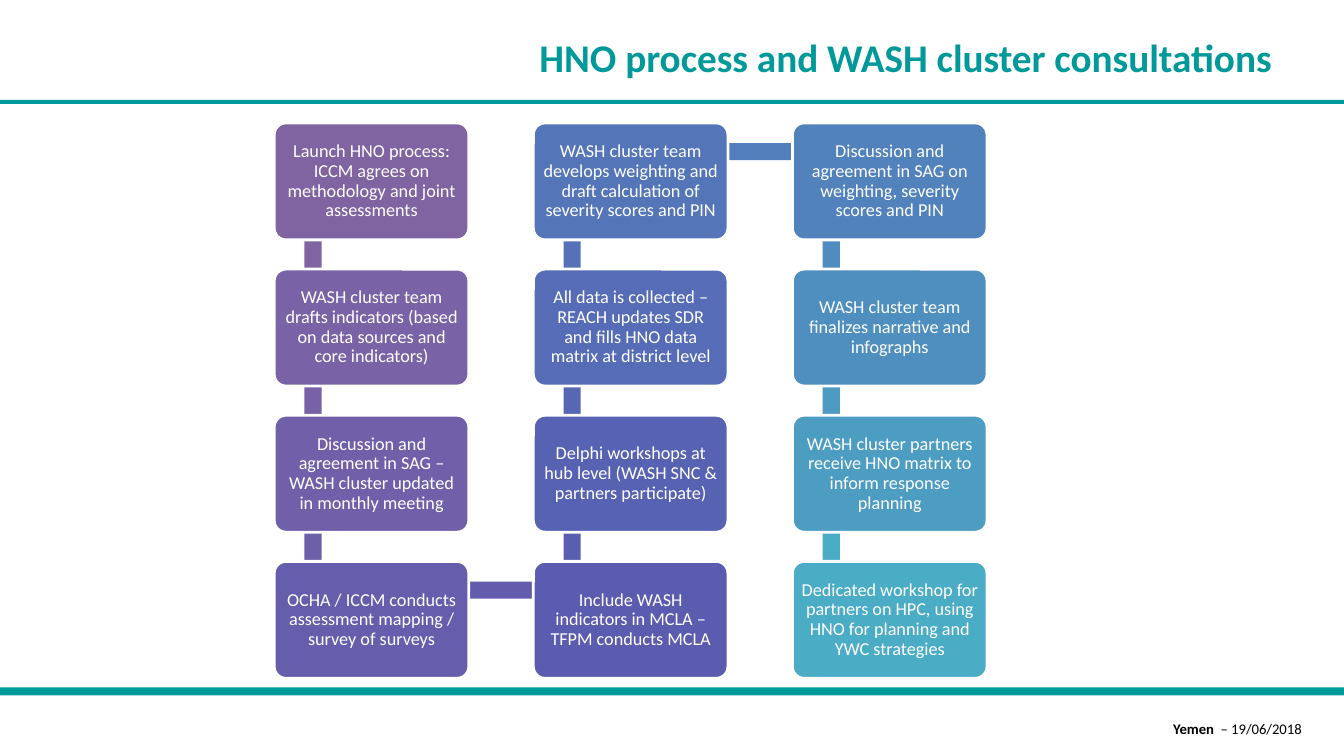
import dataclasses
import typing

import pptx
import pptx.dml.color
import pptx.enum.shapes
import pptx.enum.text
import pptx.util

RGB = pptx.dml.color.RGBColor
KIND = pptx.enum.shapes.MSO_SHAPE
ALIGN = pptx.enum.text.PP_ALIGN
MIDDLE = pptx.enum.text.MSO_ANCHOR.MIDDLE
Inches = pptx.util.Inches
Pt = pptx.util.Pt

FONT = "Calibri"
TEAL = RGB(0x00, 0x99, 0x99)
WHITE = RGB(0xFF, 0xFF, 0xFF)
BLACK = RGB(0x00, 0x00, 0x00)

# Grid of steps, in inches
WIDE, HIGH = 13.33, 7.5
ROWS = 4
LEFT, TOP = 2.72, 1.22
COL, ROW = 2.57, 1.45
BOX_W, BOX_H = 1.93, 1.16
BAR = 0.17


@dataclasses.dataclass(frozen=True)
class Step:
    text: str
    fill: RGB
    link: typing.Optional[RGB] = None  # bar to the next step


STEPS = [
    Step("Launch HNO process: ICCM agrees on methodology and joint assessments",
         RGB(0x80, 0x64, 0xA2), RGB(0x80, 0x64, 0xA2)),
    Step("WASH cluster team drafts indicators (based on data sources and core indicators)",
         RGB(0x79, 0x62, 0xA5), RGB(0x78, 0x61, 0xA6)),
    Step("Discussion and agreement in SAG – WASH cluster updated in monthly meeting",
         RGB(0x70, 0x5F, 0xA9), RGB(0x6E, 0x5F, 0xA9)),
    Step("OCHA / ICCM conducts assessment mapping / survey of surveys",
         RGB(0x66, 0x5D, 0xAC), RGB(0x63, 0x5C, 0xAD)),
    Step("Include WASH indicators in MCLA – TFPM conducts MCLA",
         RGB(0x5B, 0x5B, 0xAF), RGB(0x5A, 0x5E, 0xB1)),
    Step("Delphi workshops at hub level (WASH SNC & partners participate)",
         RGB(0x58, 0x62, 0xB3), RGB(0x57, 0x67, 0xB4)),
    Step("All data is collected – REACH updates SDR and fills HNO data matrix at district level",
         RGB(0x56, 0x6C, 0xB6), RGB(0x55, 0x72, 0xB8)),
    Step("WASH cluster team develops weighting and draft calculation of severity scores and PIN",
         RGB(0x54, 0x76, 0xB9), RGB(0x52, 0x7E, 0xBC)),
    Step("Discussion and agreement in SAG on weighting, severity scores and PIN",
         RGB(0x52, 0x82, 0xBC), RGB(0x50, 0x8C, 0xBF)),
    Step("WASH cluster team finalizes narrative and infographs",
         RGB(0x4F, 0x8F, 0xC0), RGB(0x4D, 0x9B, 0xC3)),
    Step("WASH cluster partners receive HNO matrix to inform response planning",
         RGB(0x4D, 0x9D, 0xC3), RGB(0x4B, 0xAC, 0xC6)),
    Step("Dedicated workshop for partners on HPC, using HNO for planning and YWC strategies",
         RGB(0x4B, 0xAC, 0xC6)),
]


def place(index: int) -> tuple[int, int]:
    """Column and row of a step: down, up, then down again."""
    col, row = divmod(index, ROWS)
    return col, ROWS - 1 - row if col % 2 else row


def add_block(slide, kind, x: float, y: float, w: float, h: float, fill: RGB):
    block = slide.shapes.add_shape(kind, Inches(x), Inches(y), Inches(w), Inches(h))
    block.shadow.inherit = False
    block.fill.solid()
    block.fill.fore_color.rgb = fill
    block.line.fill.background()
    return block


def style(para, size: float, color: RGB, align) -> None:
    para.alignment = align
    para.font.name = FONT
    para.font.size = Pt(size)
    para.font.color.rgb = color


def add_label(slide, x: float, y: float, w: float, h: float):
    box = slide.shapes.add_textbox(Inches(x), Inches(y), Inches(w), Inches(h))
    box.text_frame.word_wrap = True
    return box.text_frame


def add_link(slide, index: int, fill: RGB) -> None:
    (col, row), (after, below) = place(index), place(index + 1)
    x, y = LEFT + col * COL, TOP + min(row, below) * ROW
    if col == after:
        add_block(slide, KIND.RECTANGLE, x + 0.3, y + 0.29, BAR, ROW, fill)
    else:
        add_block(slide, KIND.RECTANGLE, x + 0.39, y + 0.2, COL, BAR, fill)


def add_step(slide, index: int, step: Step) -> None:
    col, row = place(index)
    box = add_block(slide, KIND.ROUNDED_RECTANGLE, LEFT + col * COL, TOP + row * ROW,
                    BOX_W, BOX_H, step.fill)
    box.adjustments[0] = 0.1
    box.line.color.rgb = WHITE
    box.line.width = Pt(2)
    frame = box.text_frame
    frame.word_wrap = True
    frame.vertical_anchor = MIDDLE
    # The rounded outline adds its own small inset
    frame.margin_left = frame.margin_right = Inches(0.05)
    frame.margin_top = frame.margin_bottom = Inches(0.05)
    frame.text = step.text
    para = frame.paragraphs[0]
    para.line_spacing = 0.9
    style(para, 13, WHITE, ALIGN.CENTER)


def main() -> None:
    deck = pptx.Presentation()
    deck.slide_width, deck.slide_height = Inches(WIDE), Inches(HIGH)
    slide = deck.slides.add_slide(deck.slide_layouts[6])

    # Rules above and below the steps
    add_block(slide, KIND.RECTANGLE, 0, 6.82, WIDE, 0.08, TEAL)
    add_block(slide, KIND.RECTANGLE, 0, 0.99, WIDE, 0.04, TEAL)

    # Footer
    foot = add_label(slide, 6.35, 7.09, 6.66, 0.35).paragraphs[0]
    place_run = foot.add_run()
    place_run.text = "Yemen "
    place_run.font.bold = True
    foot.add_run().text = " – 19/06/2018"
    style(foot, 10.5, BLACK, ALIGN.RIGHT)

    # Title
    frame = add_label(slide, 3.14, 0.36, 9.57, 0.4)
    frame.vertical_anchor = MIDDLE
    frame.text = "HNO process and WASH cluster consultations"
    title = frame.paragraphs[0]
    style(title, 28, TEAL, ALIGN.RIGHT)
    title.font.bold = True

    # Steps, each box covering the end of the bar before it
    for index, step in enumerate(STEPS):
        if step.link is not None:
            add_link(slide, index, step.link)
        add_step(slide, index, step)

    deck.save("out.pptx")


if __name__ == "__main__":
    main()
